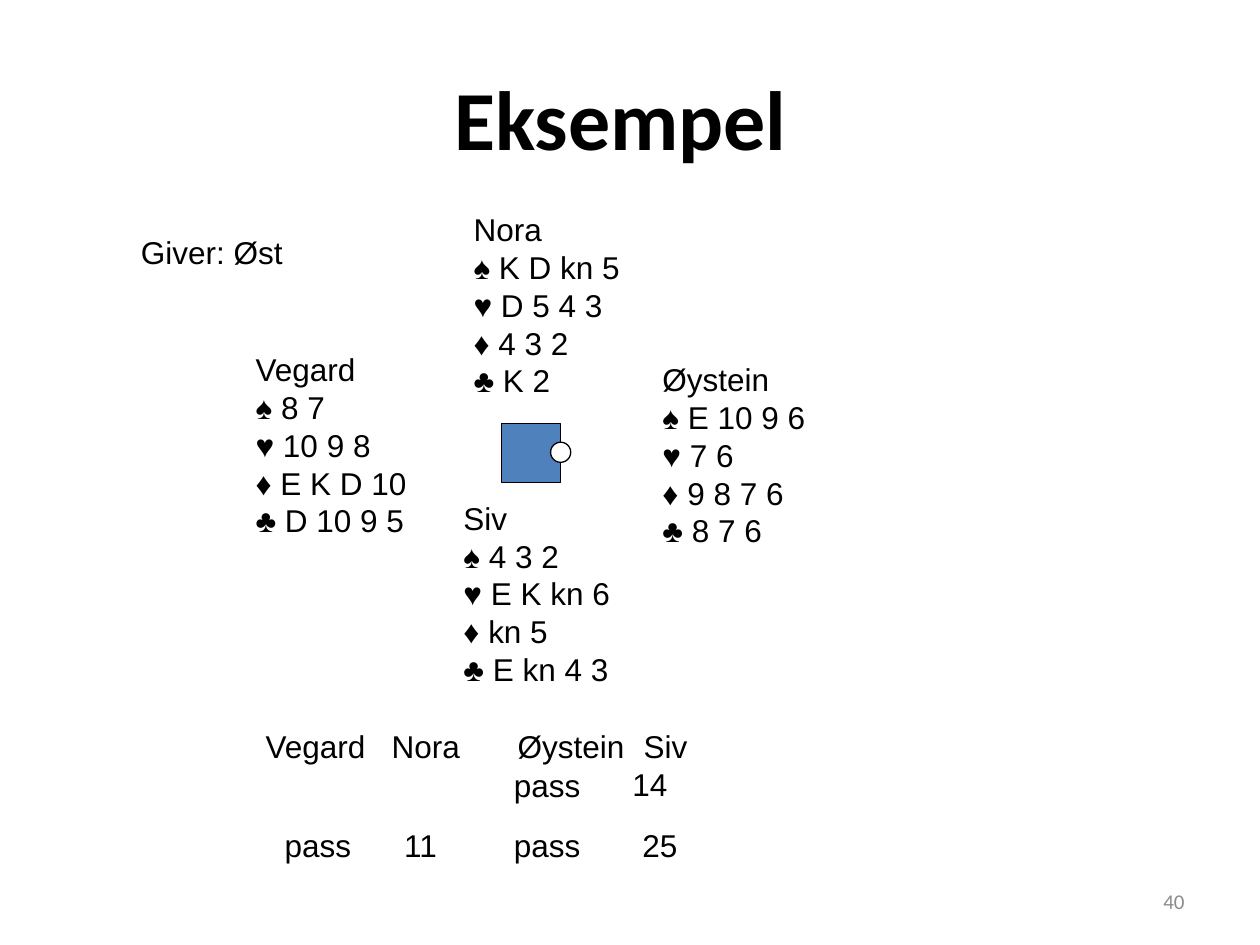
from dataclasses import dataclass
from pptx import Presentation
from pptx.dml.color import RGBColor as Rgb
from pptx.enum.shapes import MSO_SHAPE as Kind
from pptx.enum.text import MSO_ANCHOR as Anchor, MSO_AUTO_SIZE as Fit, PP_ALIGN as Align
from pptx.util import Inches, Pt


@dataclass(frozen=True)
class Theme:
    """Colours, fonts and type sizes of the deck."""
    ink: str = "000000"
    paper: str = "FFFFFF"
    blue: str = "4F81BD"
    grey: str = "8C8C8C"
    head: str = "Calibri"
    body: str = "Arial"
    big: int = 48
    mid: int = 18
    small: int = 12
    rule: float = 0.75


def write(frame, text, font, size, color, bold=False, align=Align.LEFT, anchor=Anchor.TOP):
    """Fill a text frame, one paragraph per line, in the given format."""
    frame.text = text
    frame.word_wrap = True
    frame.vertical_anchor = anchor
    for para in frame.paragraphs:
        para.alignment = align
        for run in para.runs:
            run.font.name, run.font.size, run.font.bold = font, Pt(size), bold
            run.font.color.rgb = Rgb.from_string(color)


class Page:
    """A slide on a grid of 100 columns by 75 rows, with its theme."""

    def __init__(self, deck, theme):
        """Add a slide with a title to the deck."""
        self.look = theme
        self.cell = deck.slide_width / 100
        self.slide = deck.slides.add_slide(deck.slide_layouts[5])

    def span(self, *cells):
        """Turn grid cells into lengths."""
        return [round(n * self.cell) for n in cells]

    def title(self, text, *box):
        """Place and fill the title."""
        head = self.slide.shapes.title
        head.left, head.top, head.width, head.height = self.span(*box)
        write(head.text_frame, text, self.look.head, self.look.big, self.look.ink,
              bold=True, align=Align.CENTER, anchor=Anchor.MIDDLE)

    def text(self, text, *box, **form):
        """Add a text box."""
        base = dict(font=self.look.body, size=self.look.mid, color=self.look.ink)
        frame = self.slide.shapes.add_textbox(*self.span(*box)).text_frame
        write(frame, text, **(base | form))
        frame.auto_size = Fit.NONE

    def hand(self, name, suits, *box):
        """Add a player's name above the cards of each suit."""
        rows = [f"{mark} {cards}" for mark, cards in zip("♠♥♦♣", suits)]
        self.text("\n".join([name, *rows]), *box, 16)

    def shape(self, kind, fill, *box):
        """Add an outlined shape."""
        form = self.slide.shapes.add_shape(kind, *self.span(*box))
        form.shadow.inherit = False
        form.fill.solid()
        form.fill.fore_color.rgb = Rgb.from_string(fill)
        form.line.color.rgb = Rgb.from_string(self.look.ink)
        form.line.width = Pt(self.look.rule)


def main():
    """Build the bridge example."""
    deck = Presentation()
    deck.slide_width, deck.slide_height = Inches(10), Inches(7.5)
    look = Theme()
    page = Page(deck, look)
    page.title("Eksempel ", 5, 3, 90, 12.5)

    hands = [
        ("Nora", ("K D kn 5", "D 5 4 3", "4 3 2", "K 2"), 36.6, 16.2, 16.5),
        ("Øystein", ("E 10 9 6", "7 6", "9 8 7 6", "8 7 6"), 51.6, 28.1, 15),
        ("Siv", ("4 3 2", "E K kn 6", "kn 5", "E kn 4 3"), 35.8, 39.1, 18.9),
        ("Vegard", ("8 7", "10 9 8", "E K D 10", "D 10 9 5"), 19.3, 27.3, 15.8),
    ]
    for hand in hands:
        page.hand(*hand)

    page.text("Vegard\tNora\tØystein\tSiv", 20.1, 57.2, 54.3, 4)
    bids = [("pass", 39.8, 60.3), ("14", 49.2, 60.2), ("pass", 21.6, 65.1),
            ("11", 31.1, 65.1), ("pass", 39.8, 65.1), ("25", 50, 65.1)]
    for bid in bids:
        page.text(*bid, 7.9, 4)

    page.text("Giver: Øst", 10.2, 18, 18.8, 4)
    page.text("40", 71.7, 69.5, 23.3, 4, font=look.head, size=look.small,
              color=look.grey, align=Align.RIGHT, anchor=Anchor.MIDDLE)
    page.shape(Kind.RECTANGLE, look.blue, 39.8, 33.6, 4.7, 4.7)
    page.shape(Kind.OVAL, look.paper, 43.7, 35.1, 1.6, 1.6)
    deck.save("out.pptx")


if __name__ == "__main__":
    main()
